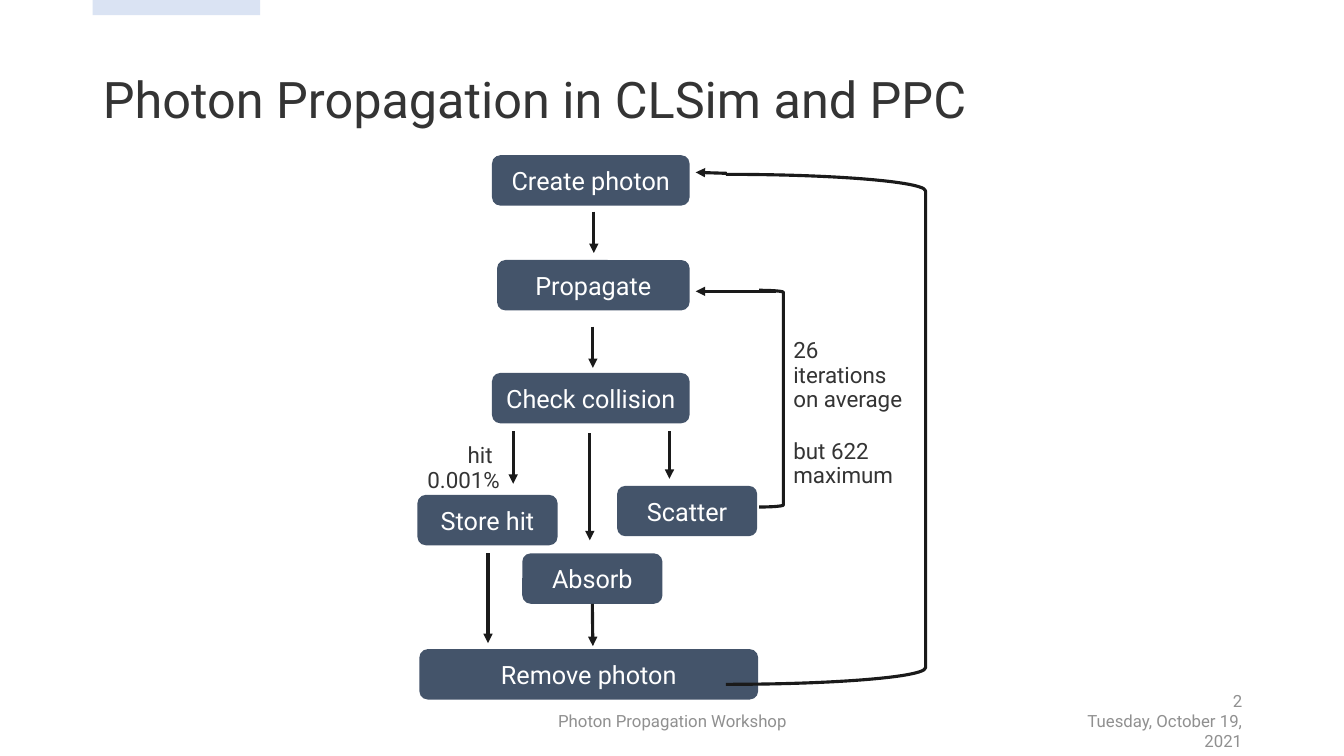
from dataclasses import dataclass

from lxml import etree
from pptx import Presentation
from pptx.dml.color import RGBColor
from pptx.enum.shapes import MSO_CONNECTOR, MSO_SHAPE
from pptx.enum.text import MSO_ANCHOR, MSO_AUTO_SIZE, PP_ALIGN
from pptx.oxml.ns import qn
from pptx.util import Inches, Pt

STRAIGHT = MSO_CONNECTOR.STRAIGHT
RECTANGLE = MSO_SHAPE.RECTANGLE
ROUNDED = MSO_SHAPE.ROUNDED_RECTANGLE
BRACKET = MSO_SHAPE.RIGHT_BRACKET
TOP, MIDDLE = MSO_ANCHOR.TOP, MSO_ANCHOR.MIDDLE
LEFT, CENTER, RIGHT = PP_ALIGN.LEFT, PP_ALIGN.CENTER, PP_ALIGN.RIGHT

FONT = "Roboto"
ACCENT = RGBColor(0xDA, 0xE3, 0xF3)
SLATE = RGBColor(0x44, 0x54, 0x6A)
INK = RGBColor(0x1A, 0x1A, 0x1A)
TEXT = RGBColor(0x34, 0x34, 0x34)
GRAY = RGBColor(0x90, 0x90, 0x90)
WHITE = RGBColor(0xFF, 0xFF, 0xFF)

LINE_WIDTH = Pt(2.25)
STEP_HEIGHT = 0.5
BOTTOM_SIDE = 2


@dataclass(frozen=True)
class Box:
    left: float
    top: float
    width: float
    height: float = STEP_HEIGHT

    def lengths(self):
        return [Inches(value) for value in (self.left, self.top, self.width, self.height)]


@dataclass(frozen=True)
class Arrow:
    start: tuple[float, float]
    end: tuple[float, float]
    source: str = ""


@dataclass(frozen=True)
class Label:
    text: str
    box: Box


STEPS = {
    "Create photon": Box(4.88, 1.54, 1.96),
    "Propagate": Box(4.93, 2.58, 1.91),
    "Check collision": Box(4.88, 3.7, 1.96),
    "Scatter": Box(6.12, 4.82, 1.39),
    "Store hit": Box(4.14, 4.91, 1.39),
    "Absorb": Box(5.18, 5.49, 1.39),
    "Remove photon": Box(4.16, 6.44, 3.36),
}
ARROWS = [
    Arrow((5.89, 2.1), (5.89, 2.51)),
    Arrow((5.88, 3.24), (5.88, 3.65)),
    Arrow((5.09, 4.28), (5.09, 4.8)),
    Arrow((5.85, 4.3), (5.85, 5.36)),
    Arrow((6.64, 4.28), (6.64, 4.75)),
    Arrow((4.84, 5.49), (4.84, 6.38)),
    Arrow((5.88, 5.99), (5.88, 6.41), source="Absorb"),
    Arrow((7.7, 2.89), (6.9, 2.89)),
    Arrow((7.21, 1.72), (6.9, 1.71)),
]
RETURN_BRACKETS = [Box(7.53, 2.88, 0.24, 2.15), Box(7.2, 1.73, 1.98, 5.06)]
LABELS = [
    Label("hit", Box(4.54, 4.36, 0.53, 0.41)),
    Label("0.001%", Box(4.14, 4.61, 0.95, 0.46)),
    Label("26 iterations on average\nbut 622 maximum", Box(7.77, 3.32, 1.41, 1.3)),
]


def write_text(shape, text: str, *, size: float, color: RGBColor, align=LEFT,
               anchor=MIDDLE, line_spacing: float = 1.0, gap: float = 0) -> None:
    """Fill a shape with one paragraph per line; gap is the space between them."""
    frame = shape.text_frame
    frame.text = text
    frame.word_wrap = True
    frame.auto_size = MSO_AUTO_SIZE.NONE
    frame.vertical_anchor = anchor
    for index, paragraph in enumerate(frame.paragraphs):
        paragraph.alignment = align
        paragraph.line_spacing = line_spacing
        paragraph.space_before = Pt(gap if index else 0)
        paragraph.font.name = FONT
        paragraph.font.size = Pt(size)
        paragraph.font.color.rgb = color


def add_filled(slide, kind, box: Box, color: RGBColor):
    shape = slide.shapes.add_shape(kind, *box.lengths())
    shape.shadow.inherit = False
    shape.fill.solid()
    shape.fill.fore_color.rgb = color
    shape.line.fill.background()
    return shape


def add_step(slide, name: str, box: Box):
    shape = add_filled(slide, ROUNDED, box, SLATE)
    write_text(shape, name, size=18, color=WHITE, align=CENTER)
    return shape


def add_bracket(slide, box: Box) -> None:
    shape = slide.shapes.add_shape(BRACKET, *box.lengths())
    shape.shadow.inherit = False
    shape.fill.background()
    shape.line.color.rgb = INK
    shape.line.width = LINE_WIDTH


def add_arrow(slide, arrow: Arrow, steps: dict) -> None:
    points = [Inches(value) for value in (*arrow.start, *arrow.end)]
    connector = slide.shapes.add_connector(STRAIGHT, *points)
    if arrow.source:
        connector.begin_connect(steps[arrow.source], BOTTOM_SIDE)
    connector.line.color.rgb = INK
    connector.line.width = LINE_WIDTH
    properties = connector.line._get_or_add_ln()
    etree.SubElement(properties, qn("a:tailEnd"), type="triangle")
    etree.SubElement(connector._element.spPr, qn("a:effectLst"))


def add_label(slide, text: str, box: Box, **text_format) -> None:
    write_text(slide.shapes.add_textbox(*box.lengths()), text, **text_format)


def main() -> None:
    presentation = Presentation()
    presentation.slide_width = Inches(13.33)
    presentation.slide_height = Inches(7.5)
    slide = presentation.slides.add_slide(presentation.slide_layouts.get_by_name("Title Only"))

    add_filled(slide, RECTANGLE, Box(0.92, 0, 1.66, 0.15), ACCENT)
    title = slide.shapes.title
    title.left, title.top, title.width, title.height = Box(0.92, 0.4, 11.5, 1.23).lengths()
    write_text(title, "Photon Propagation in CLSim and PPC", size=36, color=TEXT,
               line_spacing=0.9)

    steps = {name: add_step(slide, name, box) for name, box in STEPS.items()}
    for arrow in ARROWS:
        add_arrow(slide, arrow, steps)
    for box in RETURN_BRACKETS:
        add_bracket(slide, box)
    for label in LABELS:
        add_label(slide, label.text, label.box, size=16, color=TEXT, anchor=TOP,
                  line_spacing=0.9, gap=20)

    add_label(slide, "Photon Propagation Workshop", Box(3.6, 6.95, 6.14, 0.4),
              size=12, color=GRAY, align=CENTER)
    add_label(slide, "2\nTuesday, October 19, 2021", Box(10.56, 6.95, 1.86, 0.4),
              size=12, color=GRAY, align=RIGHT)
    presentation.save("out.pptx")


if __name__ == "__main__":
    main()
